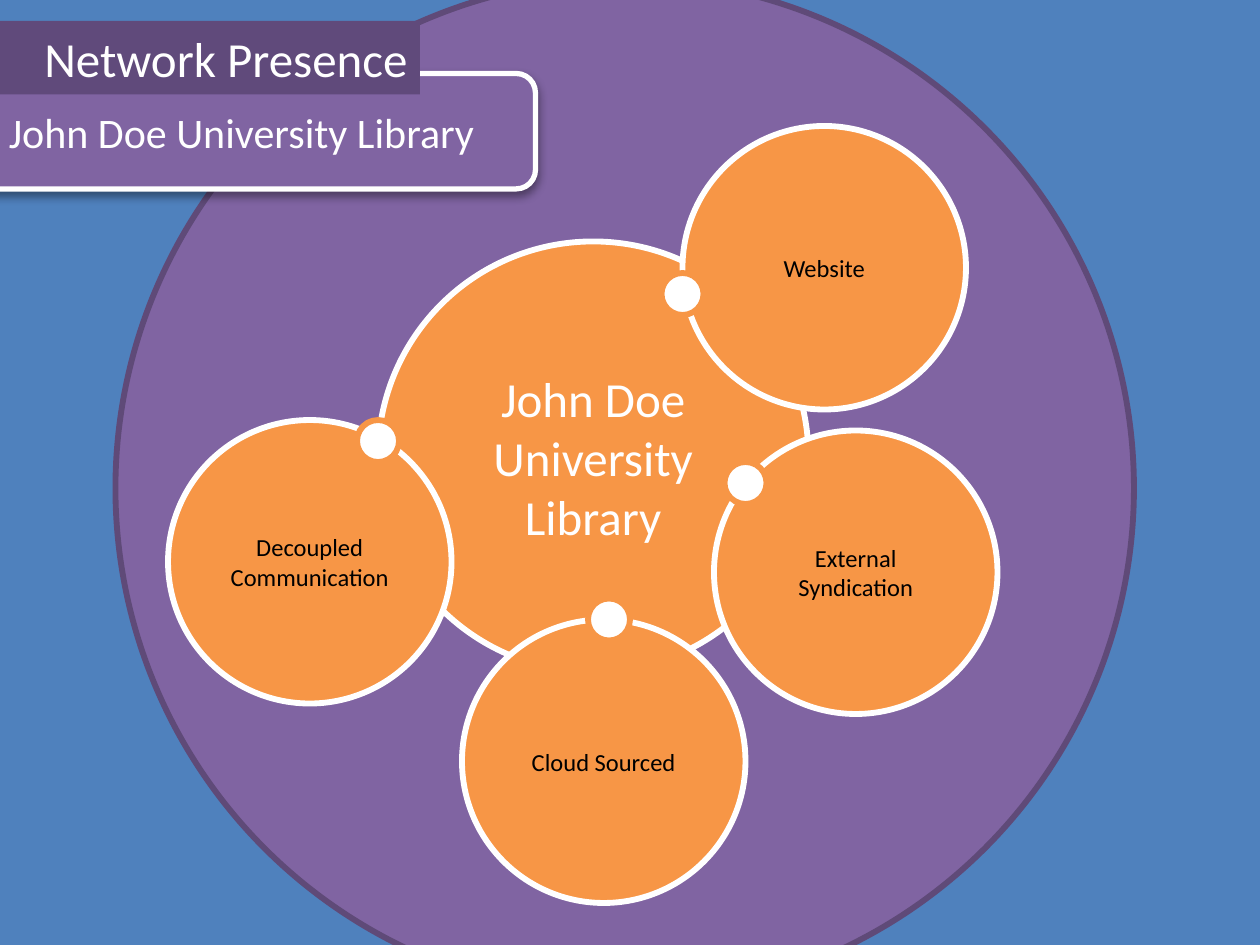
from lxml import etree
from pptx import Presentation
from pptx.dml.color import RGBColor
from pptx.enum.shapes import MSO_SHAPE
from pptx.enum.text import MSO_ANCHOR, MSO_AUTO_SIZE, PP_ALIGN
from pptx.oxml.ns import qn
from pptx.util import Emu, Pt

OVAL, ROUNDED = MSO_SHAPE.OVAL, MSO_SHAPE.ROUNDED_RECTANGLE
MIDDLE, NO_FIT = MSO_ANCHOR.MIDDLE, MSO_AUTO_SIZE.NONE
CENTER, RIGHT = PP_ALIGN.CENTER, PP_ALIGN.RIGHT

FONT = "Calibri"
LIBRARY = "John Doe University Library"
COLORS = {
    "background": "4F81BD", "purple": "8064A2", "ring": "5F4A78",
    "title": "604A7B", "orange": "F79646", "white": "FFFFFF", "black": "000000",
}
RING_WIDTH = 3.35
CHANNEL_SIZE, DOT_SIZE = 216, 32

# Left and top of each channel circle
CHANNELS = [
    ("Cloud Sourced", 352, 472),
    ("Decoupled Communication", 128, 320),
    ("External Syndication", 544, 328),
    ("Website", 520, 96),
]
DOTS = [(504, 208), (552, 352), (448, 456), (272, 320)]


def px(n):
    return Emu(n * 9525)


def rgb(name):
    return RGBColor.from_string(COLORS[name])


def set_fill(sp, color):
    sp.fill.solid()
    sp.fill.fore_color.rgb = rgb(color)


def set_text(sp, text, size, color, align=CENTER):
    tf = sp.text_frame
    tf.word_wrap = True
    tf.auto_size = NO_FIT
    tf.vertical_anchor = MIDDLE
    p = tf.paragraphs[0]
    p.alignment = align
    r = p.add_run()
    r.text = text
    r.font.name = FONT
    r.font.size = Pt(size)
    r.font.color.rgb = rgb(color)


def add_outlined(s, kind, x, y, w, h, fill, line, width=RING_WIDTH):
    sp = s.shapes.add_shape(kind, px(x), px(y), px(w), px(h))
    sp.shadow.inherit = False
    set_fill(sp, fill)
    sp.line.color.rgb = rgb(line)
    sp.line.width = Pt(width)
    return sp


def add_circle(s, x, y, size, fill, line):
    return add_outlined(s, OVAL, x, y, size, size, fill, line)


def add_drop_shadow(sp):
    effects = sp.element.spPr.find(qn("a:effectLst"))
    shadow = etree.SubElement(effects, qn("a:outerShdw"), blurRad=str(Pt(5.2)),
                              dist=str(Pt(3)), dir="5400000", rotWithShape="0")
    color = etree.SubElement(shadow, qn("a:srgbClr"), val=COLORS["black"])
    etree.SubElement(color, qn("a:alpha"), val="40000")


def add_header(s):
    # Subtitle panel
    panel = add_outlined(s, ROUNDED, -40, 56, 448, 88, "purple", "white", 3)
    add_drop_shadow(panel)
    set_text(panel, LIBRARY, 24, "white")

    # Title band, raised above the panel
    title = s.shapes.title
    title.left, title.top, title.width, title.height = map(px, (-40, 16, 360, 56))
    set_fill(title, "title")
    set_text(title, "Network Presence", 28, "white", RIGHT)
    title.element.getparent().append(title.element)


def main():
    prs = Presentation()
    prs.slide_width, prs.slide_height = px(960), px(720)
    s = prs.slides.add_slide(prs.slide_layouts[5])
    s.background.fill.solid()
    s.background.fill.fore_color.rgb = rgb("background")

    # Surrounding disc and header
    add_circle(s, 88, -16, 776, "purple", "ring")
    add_header(s)

    # Central hub
    hub = add_circle(s, 288, 184, 328, "orange", "white")
    set_text(hub, LIBRARY, 28, "white")

    # Channels and their link dots
    for name, x, y in CHANNELS:
        channel = add_circle(s, x, y, CHANNEL_SIZE, "orange", "white")
        set_text(channel, name, 14, "black")
    for x, y in DOTS:
        add_circle(s, x, y, DOT_SIZE, "white", "orange")

    prs.save("out.pptx")


if __name__ == "__main__":
    main()
